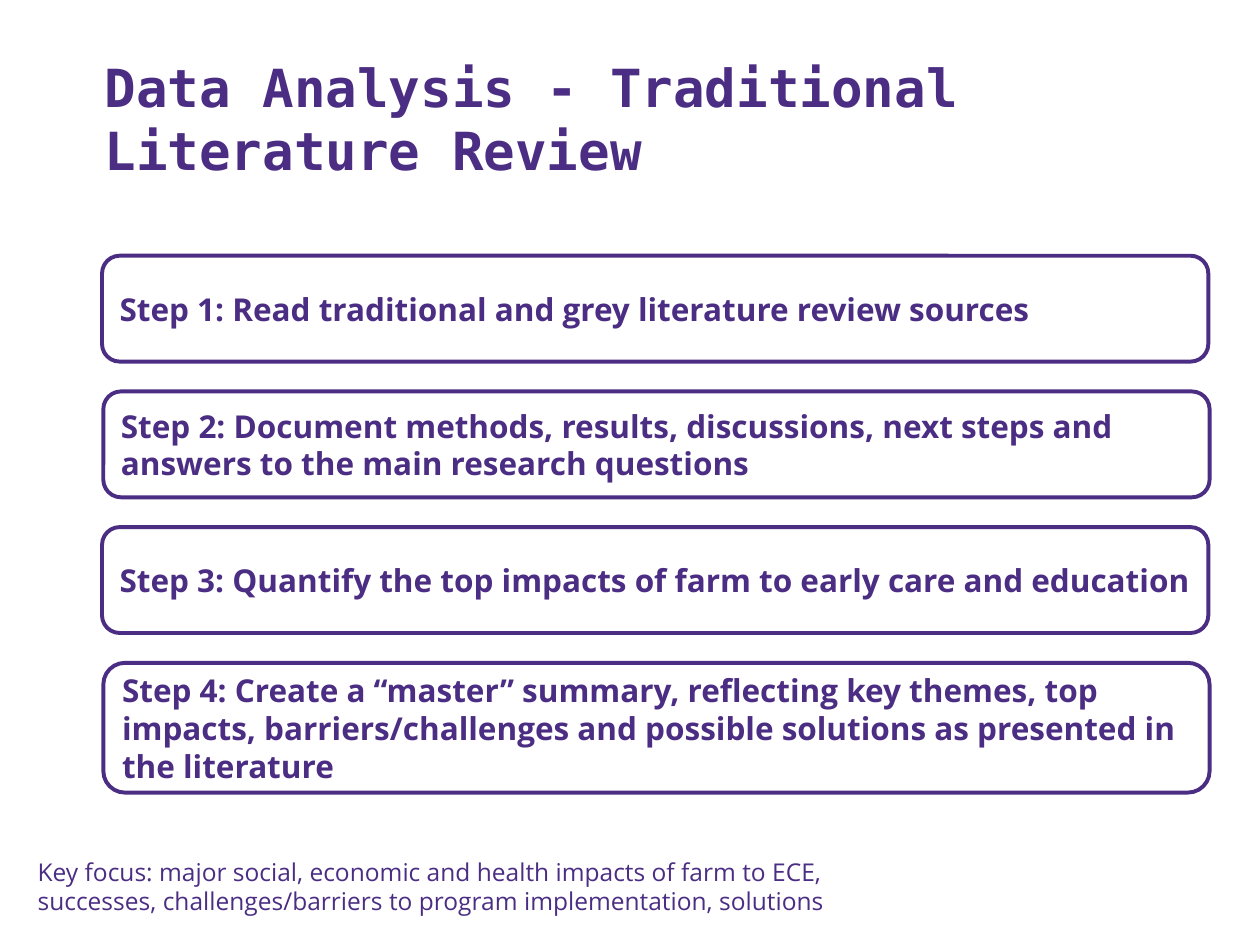
from dataclasses import dataclass

from pptx import Presentation
from pptx.dml.color import RGBColor as Rgb
from pptx.enum.shapes import MSO_SHAPE as Shape
from pptx.enum.text import MSO_ANCHOR as Anchor, MSO_AUTO_SIZE as Fit, PP_ALIGN as Align
from pptx.util import Inches, Pt


@dataclass(frozen=True)
class Theme:
    ink: Rgb = Rgb(0x4B, 0x2E, 0x83)
    paper: Rgb = Rgb(0xFF, 0xFF, 0xFF)
    mono: str = "DejaVu Sans Mono"
    sans: str = "Open Sans"
    head: int = 30
    step: int = 18
    note: int = 14
    edge: float = 2.25


THEME = Theme()

STEPS = [
    "Read traditional and grey literature review sources",
    "Document methods, results, discussions, next steps and answers to the main research questions",
    "Quantify the top impacts of farm to early care and education",
    "Create a “master” summary, reflecting key themes, top impacts, "
    "barriers/challenges and possible solutions as presented in the literature",
]


def set_text(shape, text, face, size, bold, anchor, pad):
    frame = shape.text_frame
    frame.text = text
    frame.word_wrap = True
    frame.auto_size = Fit.NONE
    frame.vertical_anchor = anchor
    frame.margin_left = frame.margin_right = Inches(0.1)
    frame.margin_top = frame.margin_bottom = Inches(pad)
    para = frame.paragraphs[0]
    para.alignment = Align.LEFT
    font = para.runs[0].font
    font.name, font.size, font.bold = face, Pt(size), bold
    font.color.rgb = THEME.ink


def add_title(slide, text):
    title = slide.shapes.title
    title.left, title.top = Inches(0.73), Inches(0.41)
    title.width, title.height = Inches(8.95), Inches(1.08)
    set_text(title, text, THEME.mono, THEME.head, True, Anchor.BOTTOM, 0.05)


def add_step(slide, text, left, top, high):
    box = slide.shapes.add_shape(
        Shape.ROUNDED_RECTANGLE, Inches(left), Inches(top), Inches(8.78), Inches(high))
    box.shadow.inherit = False
    box.fill.solid()
    box.fill.fore_color.rgb = THEME.paper
    box.line.color.rgb = THEME.ink
    box.line.width = Pt(THEME.edge)
    set_text(box, text, THEME.sans, THEME.step, True, Anchor.MIDDLE, 0.1)


def add_note(slide, text):
    note = slide.shapes.add_textbox(Inches(0.2), Inches(6.7), Inches(7.02), Inches(0.63))
    set_text(note, text, THEME.sans, THEME.note, False, Anchor.TOP, 0.1)


def main():
    deck = Presentation()
    deck.slide_width, deck.slide_height = Inches(10), Inches(7.5)
    slide = deck.slides.add_slide(deck.slide_layouts[5])

    add_title(slide, "Data Analysis - Traditional Literature Review")

    # Steps at an equal pitch; even ones sit a hair right, the last is taller
    for i, text in enumerate(STEPS):
        high = 1.03 if i == len(STEPS) - 1 else 0.84
        add_step(slide, f"Step {i + 1}: {text}", 0.81 + 0.01 * (i % 2), 2.03 + 1.077 * i, high)

    # Closing note
    add_note(slide, "Key focus: major social, economic and health impacts of farm to ECE, "
                    "successes, challenges/barriers to program implementation, solutions")

    deck.save("out.pptx")


if __name__ == "__main__":
    main()
